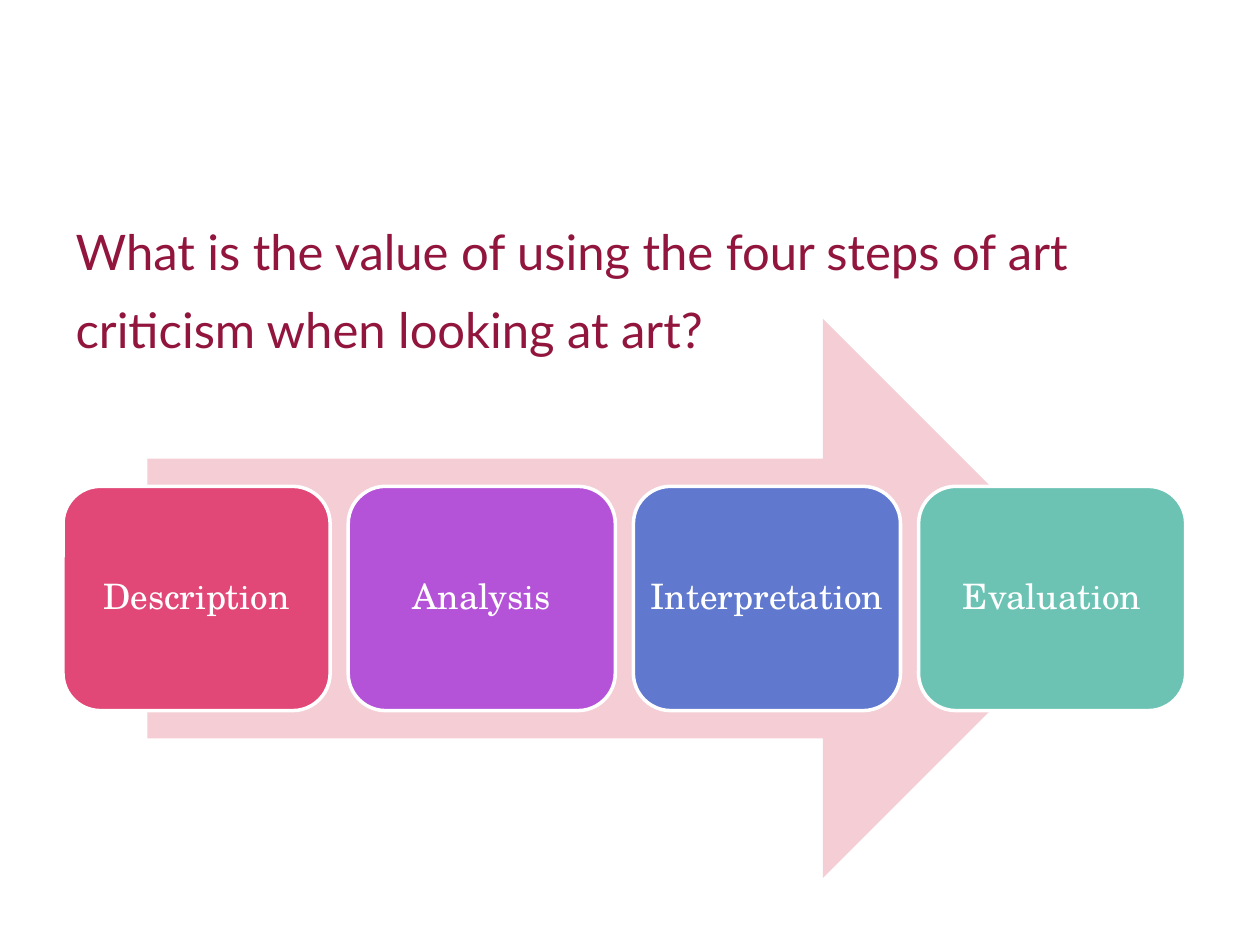
import pptx
import pptx.dml.color
import pptx.enum.shapes
import pptx.enum.text
import pptx.oxml.ns
import pptx.util
from pptx.util import Inches

COLORS = {
    "background": "FFFFFF",
    "question": "91153C",
    "arrow": "F4CDD5",
    "white": "FFFFFF",
    "rose": "E14878",
    "violet": "B453D8",
    "blue": "6078CD",
    "teal": "6CC3B4",
}
STEPS = [
    ("Description", "rose"),
    ("Analysis", "violet"),
    ("Interpretation", "blue"),
    ("Evaluation", "teal"),
]
QUESTION = [
    "What is the value of using the four steps of art",
    "criticism when looking at art?",
]


def rgb(name):
    return pptx.dml.color.RGBColor.from_string(COLORS[name])


def write(para, text, font, size, color, align=None, line=1.0, before=0, after=0):
    span = para.add_run()
    span.text = text
    span.font.name = font
    span.font.size = pptx.util.Pt(size)
    span.font.color.rgb = rgb(color)
    para.alignment = align
    para.line_spacing = line
    para.space_before = pptx.util.Pt(before)
    para.space_after = pptx.util.Pt(after)


class Page:
    heading_font = "Lato"
    step_font = "TeX Gyre Schola"

    def __init__(self, deck):
        self.slide = deck.slides.add_slide(deck.slide_layouts[1])
        self.slide.background.fill.solid()
        self.slide.background.fill.fore_color.rgb = rgb("background")
        title = self.slide.shapes.title.element
        title.getparent().remove(title)

    def question(self, lines, left, top, width, height):
        box = self.slide.placeholders[1]
        box.left, box.top = Inches(left), Inches(top)
        box.width, box.height = Inches(width), Inches(height)
        frame = box.text_frame
        frame.auto_size = pptx.enum.text.MSO_AUTO_SIZE.NONE
        for index, text in enumerate(lines):
            para = frame.add_paragraph() if index else frame.paragraphs[0]
            write(para, text, self.heading_font, 28, "question", line=1.15,
                  before=5.6 if index else 0, after=16 if index else 0)
            properties = para._p.get_or_add_pPr()
            properties.set("marL", str(Inches(0.38)))
            properties.set("indent", str(-Inches(0.38)))
            properties.append(pptx.oxml.parse_xml(
                f'<a:buNone {pptx.oxml.ns.nsdecls("a")}/>'))

    def shape(self, kind, left, top, width, height, fill):
        shape = self.slide.shapes.add_shape(
            kind, Inches(left), Inches(top), Inches(width), Inches(height))
        shape.shadow.inherit = False
        shape.fill.solid()
        shape.fill.fore_color.rgb = rgb(fill)
        shape.line.fill.background()
        return shape

    def arrow(self, left, top, width, height):
        self.shape(pptx.enum.shapes.MSO_SHAPE.RIGHT_ARROW,
                   left, top, width, height, "arrow")

    def step(self, text, left, top, width, height, fill):
        box = self.shape(pptx.enum.shapes.MSO_SHAPE.ROUNDED_RECTANGLE,
                         left, top, width, height, fill)
        box.line.color.rgb = rgb("white")
        box.line.width = pptx.util.Pt(2)
        frame = box.text_frame
        frame.margin_left = frame.margin_right = Inches(0.08)
        frame.margin_top = frame.margin_bottom = Inches(0.08)
        frame.word_wrap = False
        frame.vertical_anchor = pptx.enum.text.MSO_ANCHOR.MIDDLE
        write(frame.paragraphs[0], text, self.step_font, 20, "white",
              align=pptx.enum.text.PP_ALIGN.CENTER, line=0.9)


def main():
    deck = pptx.Presentation()
    deck.slide_width, deck.slide_height = Inches(10), Inches(7.5)
    page = Page(deck)
    page.question(QUESTION, 0.5, 1.64, 8.92, 0.67)
    page.arrow(1.17, 2.53, 7.58, 4.44)
    first, last = 0.5, 7.29
    pitch = (last - first) / (len(STEPS) - 1)
    for index, (text, fill) in enumerate(STEPS):
        page.step(text, first + index * pitch, 3.86, 2.12, 1.78, fill)
    deck.save("out.pptx")


if __name__ == "__main__":
    main()
